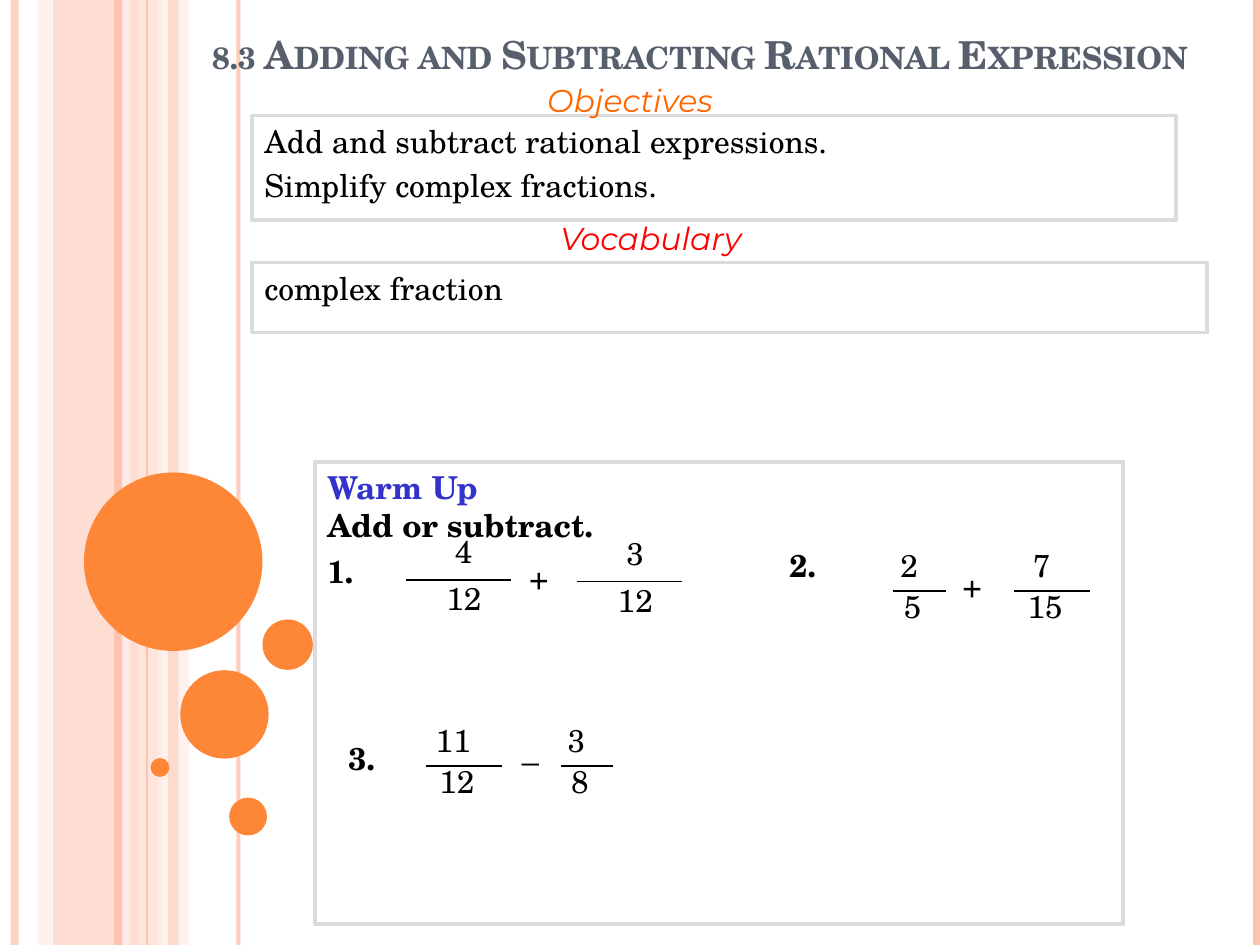
from lxml.etree import SubElement
from pptx import Presentation
from pptx.dml.color import RGBColor
from pptx.enum.shapes import MSO_CONNECTOR, MSO_SHAPE
from pptx.enum.text import MSO_ANCHOR, MSO_AUTO_SIZE, PP_ALIGN
from pptx.oxml.ns import qn
from pptx.util import Pt

WIDTH, HEIGHT = 720, 540
SERIF, SANS = "TeX Gyre Schola", "Montserrat"
BLACK = RGBColor(0x00, 0x00, 0x00)
SLATE = RGBColor(0x57, 0x5F, 0x6D)
ORANGE = RGBColor(0xFE, 0x86, 0x37)
CORAL = RGBColor(0xFE, 0xC3, 0xAE)
PEACH = RGBColor(0xFF, 0xD9, 0xCE)
BLUSH = RGBColor(0xFF, 0xED, 0xE8)
GRAY = RGBColor(0xDB, 0xDB, 0xDB)
OBJECTIVES_ORANGE = RGBColor(0xFF, 0x66, 0x00)
VOCABULARY_RED = RGBColor(0xFF, 0x00, 0x00)
WARM_UP_BLUE = RGBColor(0x33, 0x33, 0xCC)

BANDS = [(30.2, 48.2, CORAL, 54), (21.6, 8.2, PEACH, 36),
         (78, 14.2, PEACH, 70), (90, 18, BLUSH, 71)]
STRIPES = [(8.4, CORAL, 4.5, 73), (72, BLUSH, 4.5, 83), (67.2, CORAL, 4.5, 100),
           (136.2, CORAL, 2.25, 82), (84, CORAL, 0.75, 100), (718, CORAL, 4.5, 100)]
NARROW_BAND = (96, 6, CORAL, 51)
CIRCLES = [(48, 270, 102), (103, 383, 50.5), (86, 433.2, 10.8),
           (131, 455.8, 21.6), (150, 354, 28.8)]

WIDE_STYLE = {"rise": 31, "drop": 4, "top_shift": 3, "bottom_shift": 3}
SLIM_STYLE = {"rise": 29.5, "drop": 5.8, "top_shift": -6, "bottom_shift": -4}
PROBLEMS = [
    ("1.", 0, 47.8, ("+", 128, 51.4), WIDE_STYLE,
     [("4", "12", 52, 67.4, 60), ("3", "12", 150, 68.4, 60)]),
    ("2.", 264, 44.2, ("+", 375.5, 55.7), SLIM_STYLE,
     [("2", "5", 330.5, 73.7, 30), ("7", "15", 399.6, 73.7, 43.2)]),
    ("3.", 12, 155, ("–", 123, 155.8), SLIM_STYLE,
     [("11", "12", 63.4, 173.8, 43.2), ("3", "8", 140.4, 173.8, 30)]),
]


def set_alpha(shape, percent):
    """Make the shape's first solid colour partly transparent."""
    if percent < 100:
        color = next(shape.element.spPr.iter(qn("a:srgbClr")))
        SubElement(color, qn("a:alpha"), val=str(percent * 1000))


def add_line(slide, start, end, color, weight, alpha=100):
    """Draw a straight line between two points."""
    line = slide.shapes.add_connector(MSO_CONNECTOR.STRAIGHT, *map(Pt, start + end))
    line.line.color.rgb = color
    line.line.width = Pt(weight)
    SubElement(line.element.spPr, qn("a:effectLst"))
    set_alpha(line, alpha)


def add_solid(slide, kind, box, color, alpha=100):
    """Draw a filled shape without an outline."""
    shape = slide.shapes.add_shape(kind, *map(Pt, box))
    shape.shadow.inherit = False
    shape.fill.solid()
    shape.fill.fore_color.rgb = color
    shape.line.fill.background()
    set_alpha(shape, alpha)


def style_paragraph(paragraph, color=BLACK, bold=False, italic=False,
                    font=SERIF, size=18, align=PP_ALIGN.LEFT):
    """Format a paragraph and its runs."""
    paragraph.alignment = align
    for run in paragraph.runs:
        run.font.name = font
        run.font.size = Pt(size)
        run.font.bold = bold
        run.font.italic = italic
        run.font.color.rgb = color


def add_label(slide, box, text, anchor=MSO_ANCHOR.TOP, **style):
    """Place one line of text in a box."""
    text_frame = slide.shapes.add_textbox(*map(Pt, box)).text_frame
    text_frame.word_wrap = True
    text_frame.vertical_anchor = anchor
    text_frame.text = text
    style_paragraph(text_frame.paragraphs[0], **style)


def add_panel(slide, box, lines, styles, space_before=0):
    """Draw a gray-framed panel with its lines of text."""
    panel = slide.shapes.add_shape(MSO_SHAPE.RECTANGLE, *map(Pt, box))
    panel.shadow.inherit = False
    panel.fill.background()
    panel.line.color.rgb = GRAY
    panel.line.width = Pt(2.25)
    panel.text_frame.vertical_anchor = MSO_ANCHOR.TOP
    panel.text_frame.text = "\n".join(lines)
    for paragraph, style in zip(panel.text_frame.paragraphs, styles):
        paragraph.space_before = Pt(space_before)
        style_paragraph(paragraph, **style)


def add_backdrop(slide):
    """Draw the vertical bands, stripes and circles."""
    for left, width, color, alpha in BANDS:
        add_solid(slide, MSO_SHAPE.RECTANGLE, (left, 0, width, HEIGHT), color, alpha)
    for x, color, weight, alpha in STRIPES:
        add_line(slide, (x, 0), (x, HEIGHT), color, weight, alpha)
    left, width, color, alpha = NARROW_BAND
    add_solid(slide, MSO_SHAPE.RECTANGLE, (left, 0, width, HEIGHT), color, alpha)
    for left, top, size in CIRCLES:
        add_solid(slide, MSO_SHAPE.OVAL, (left, top, size, size), ORANGE)


def place_title(slide, box, text):
    """Format the title placeholder and bring it in front of the backdrop."""
    title = slide.shapes.title
    title.left, title.top, title.width, title.height = map(Pt, box)
    text_frame = title.text_frame
    text_frame.text = text
    text_frame.auto_size = MSO_AUTO_SIZE.NONE
    text_frame.vertical_anchor = MSO_ANCHOR.BOTTOM
    paragraph = text_frame.paragraphs[0]
    style_paragraph(paragraph, color=SLATE, bold=True, size=22)
    paragraph.runs[0].font._element.set("cap", "small")
    title.element.getparent().append(title.element)


def add_section(slide, box, caption, caption_box, color, lines):
    """Add a framed list with its centred caption above."""
    add_panel(slide, box, lines, [{}] * len(lines), space_before=3.6)
    add_label(slide, caption_box, caption, MSO_ANCHOR.MIDDLE, color=color,
              italic=True, font=SANS, align=PP_ALIGN.CENTER)


def add_centered(slide, center, top, text):
    """Place a number or sign centred on a point."""
    add_label(slide, (center - 24, top, 48, 29), text, align=PP_ALIGN.CENTER)


def add_fraction(slide, left, top, width, numerator, denominator, style):
    """Draw a fraction around its bar."""
    center = left + width / 2
    add_centered(slide, center + style["top_shift"], top - style["rise"], numerator)
    add_centered(slide, center + style["bottom_shift"], top - style["drop"], denominator)
    add_line(slide, (left, top), (left + width, top), BLACK, 0.75)


def add_warm_up(slide, box):
    """Add the warm-up panel with its numbered problems."""
    left, top = box[:2]
    add_panel(slide, box, ["Warm Up", "Add or subtract."],
              [{"color": WARM_UP_BLUE, "bold": True}, {"bold": True}])
    for number, x, y, operator, style, fractions in PROBLEMS:
        add_label(slide, (left + x, top + y, 48, 36), number, bold=True)
        sign, sign_x, sign_y = operator
        add_centered(slide, left + sign_x, top + sign_y, sign)
        for numerator, denominator, bar_x, bar_y, width in fractions:
            add_fraction(slide, left + bar_x, top + bar_y, width,
                         numerator, denominator, style)


def main():
    """Build and save the slide."""
    presentation = Presentation()
    presentation.slide_width, presentation.slide_height = Pt(WIDTH), Pt(HEIGHT)
    slide = presentation.slides.add_slide(presentation.slide_layouts[5])
    add_backdrop(slide)
    place_title(slide, (114, 18, 600, 30), "8.3 Adding and Subtracting Rational Expression")
    add_section(slide, (144, 66, 528, 60), "Objectives", (0, 48, WIDTH, 18),
                OBJECTIVES_ORANGE,
                ["Add and subtract rational expressions.", "Simplify complex fractions."])
    add_section(slide, (144, 150, 546, 40), "Vocabulary", (12, 127, WIDTH, 18),
                VOCABULARY_RED, ["complex fraction"])
    add_warm_up(slide, (180, 264, 462, 264))
    presentation.save("out.pptx")


if __name__ == "__main__":
    main()
